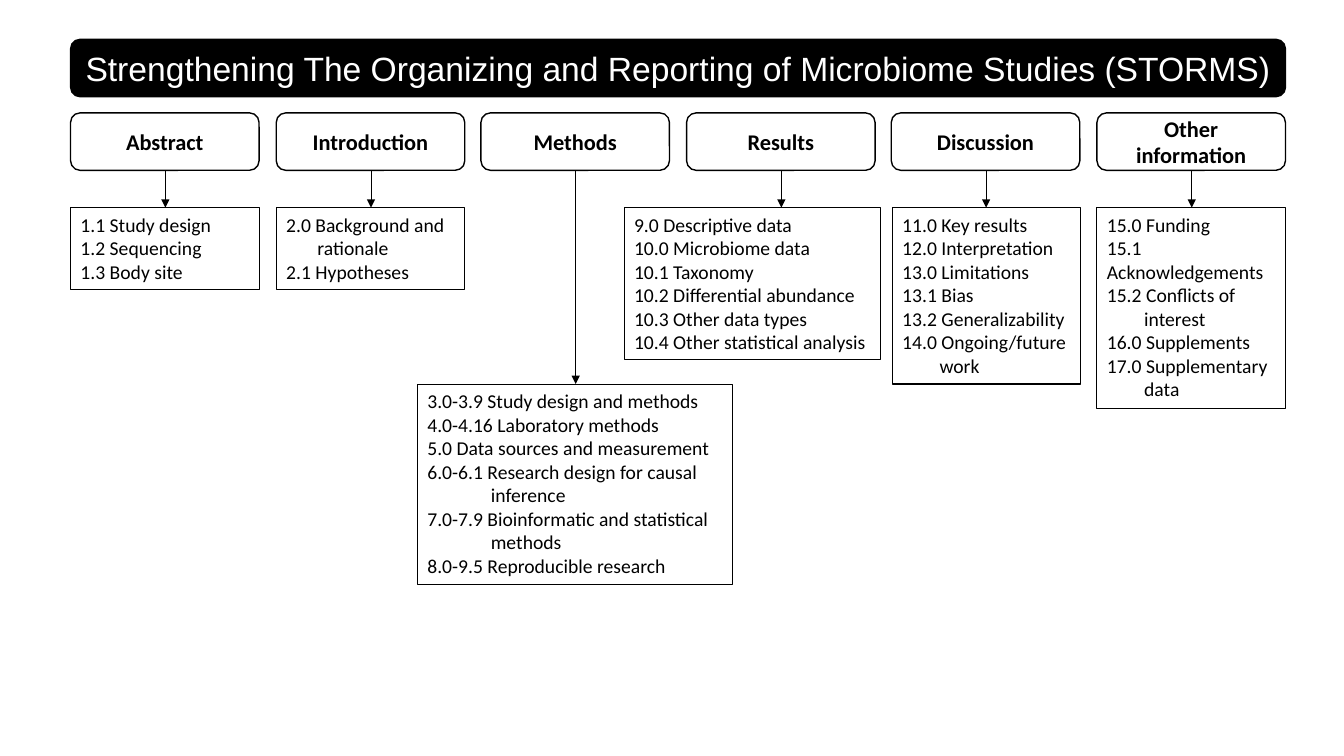
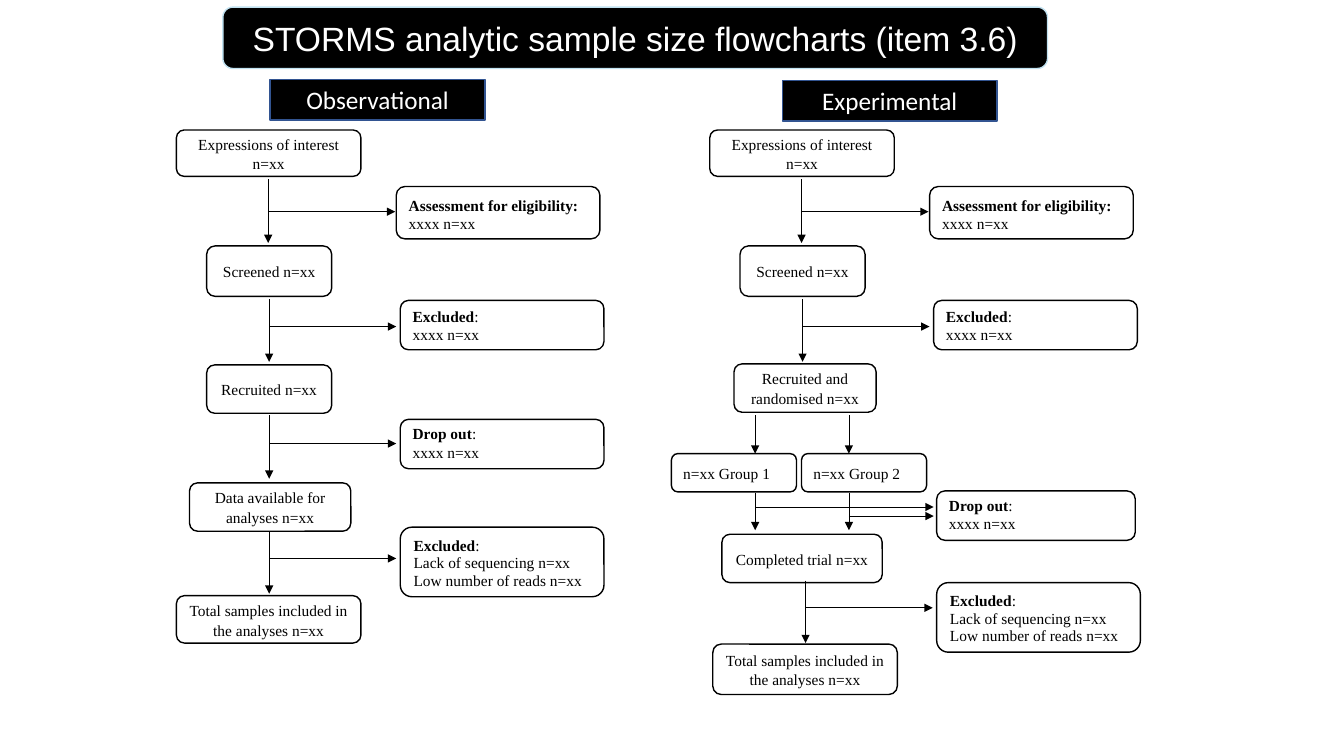
import lxml.etree
import pptx
import pptx.dml.color
import pptx.enum.shapes
import pptx.enum.text
import pptx.oxml
import pptx.oxml.ns
import pptx.util

SCALE = 9144
COLORS = {"black": "000000", "white": "FFFFFF", "pale": "C1E2F1", "navy": "325491"}
SHAPES = pptx.enum.shapes.MSO_SHAPE
ANCHORS = pptx.enum.text.MSO_ANCHOR
ALIGNS = pptx.enum.text.PP_ALIGN


def px(length):
    return pptx.util.Emu(length * SCALE)


def color(name):
    return pptx.dml.color.RGBColor.from_string(COLORS[name])


def put_text(frame, text, font="Calibri", size=14, ink="black", bold=False,
             align=ALIGNS.LEFT, line_spacing=None, space_before=0, hanging=0, join=False):
    paragraph = frame.paragraphs[-1]
    if not join:
        if paragraph.runs:
            paragraph = frame.add_paragraph()
            paragraph.space_before = pptx.util.Pt(space_before)
        paragraph.alignment = align
        paragraph.line_spacing = line_spacing
        if hanging:
            properties = paragraph._p.get_or_add_pPr()
            properties.set("marL", str(px(hanging)))
            properties.set("indent", str(px(-hanging)))
    run = paragraph.add_run()
    run.text = text
    run.font.name = font
    run.font.size = pptx.util.Pt(size)
    run.font.bold = bold
    run.font.color.rgb = color(ink)


class Deck:
    serif = {"font": "Times New Roman", "size": 11}

    def __init__(self):
        self.presentation = pptx.Presentation()
        self.presentation.slide_width = px(1333)
        self.presentation.slide_height = px(750)
        self.slide = None

    def add_slide(self, title, box, line="black"):
        self.slide = self.presentation.slides.add_slide(self.presentation.slide_layouts[5])
        self.box(box, SHAPES.ROUNDED_RECTANGLE, fill="black", line=line)
        placeholder = self.slide.shapes.title
        placeholder.left, placeholder.top, placeholder.width, placeholder.height = map(px, box)
        self.slide.shapes._spTree.append(placeholder._element)
        frame = placeholder.text_frame
        frame.auto_size = pptx.enum.text.MSO_AUTO_SIZE.NONE
        frame.word_wrap = True
        frame.vertical_anchor = ANCHORS.MIDDLE
        put_text(frame, title, font="Arial", size=24, ink="white", align=ALIGNS.CENTER)

    def box(self, box, kind, fill="white", line="black", anchor=ANCHORS.MIDDLE):
        shape = self.slide.shapes.add_shape(kind, *map(px, box))
        shape.shadow.inherit = False
        shape.fill.solid()
        shape.fill.fore_color.rgb = color(fill)
        shape.line.color.rgb = color(line)
        shape.line.width = pptx.util.Pt(1)
        shape.text_frame.word_wrap = True
        shape.text_frame.vertical_anchor = anchor
        return shape.text_frame

    def section(self, text, box):
        frame = self.box(box, SHAPES.ROUNDED_RECTANGLE)
        put_text(frame, text, size=16, bold=True, align=ALIGNS.CENTER)

    def heading(self, text, box):
        frame = self.box(box, SHAPES.RECTANGLE, fill="black", line="navy")
        put_text(frame, text, size=18, ink="white", align=ALIGNS.CENTER)

    def item_list(self, items, box, hanging):
        shape = self.slide.shapes.add_textbox(*map(px, box))
        shape.line.color.rgb = color("black")
        shape.line.width = pptx.util.Pt(0.75)
        frame = shape.text_frame
        frame.word_wrap = True
        frame.auto_size = pptx.enum.text.MSO_AUTO_SIZE.SHAPE_TO_FIT_TEXT
        for item in items:
            put_text(frame, item, hanging=hanging if item in HANGING_ITEMS else 0)

    def step(self, text, box, align=ALIGNS.CENTER):
        frame = self.box(box, SHAPES.FLOWCHART_ALTERNATE_PROCESS)
        put_text(frame, text, align=align, line_spacing=1.07, **self.serif)

    def side_note(self, label, lines, box, mark="", line_spacing=0.5, space_before=6):
        frame = self.box(box, SHAPES.FLOWCHART_ALTERNATE_PROCESS, anchor=ANCHORS.BOTTOM)
        put_text(frame, label, bold=True, line_spacing=line_spacing, **self.serif)
        if mark:
            put_text(frame, mark, join=True, **self.serif)
        for line in lines:
            put_text(frame, line, line_spacing=line_spacing, space_before=space_before,
                     **self.serif)

    def arrow(self, *ends):
        connector = self.slide.shapes.add_connector(
            pptx.enum.shapes.MSO_CONNECTOR.STRAIGHT, *map(px, ends))
        connector.line.color.rgb = color("black")
        connector.line.width = pptx.util.Pt(0.5)
        tail = lxml.etree.SubElement(connector.line._get_or_add_ln(),
                                     pptx.oxml.ns.qn("a:tailEnd"))
        tail.set("type", "triangle")
        lxml.etree.SubElement(connector._element.spPr, pptx.oxml.ns.qn("a:effectLst"))

    def branch(self, x, top, bottom, side_y, side_x):
        self.arrow(x, top, x, bottom)
        self.arrow(x, side_y, side_x, side_y)


HANGING_ITEMS = {
    "2.0 Background and rationale",
    "6.0-6.1 Research design for causal inference",
    "7.0-7.9 Bioinformatic and statistical methods",
    "14.0 Ongoing/future work",
    "15.2 Conflicts of interest",
    "17.0 Supplementary data",
}

SECTIONS = [
    ("Abstract", (70, 206, 187, 81), 0,
     ["1.1 Study design", "1.2 Sequencing", "1.3 Body site"]),
    ("Introduction", (274, 206, 187, 81), 31,
     ["2.0 Background and rationale", "2.1 Hypotheses"]),
    ("Methods", (414, 381, 313, 199), 63,
     ["3.0-3.9 Study design and methods", "4.0-4.16 Laboratory methods",
      "5.0 Data sources and measurement", "6.0-6.1 Research design for causal inference",
      "7.0-7.9 Bioinformatic and statistical methods", "8.0-9.5 Reproducible research"]),
    ("Results", (619, 206, 254, 151), 0,
     ["9.0 Descriptive data", "10.0 Microbiome data", "10.1 Taxonomy",
      "10.2 Differential abundance", "10.3 Other data types",
      "10.4 Other statistical analysis"]),
    ("Discussion", (885, 206, 187, 175), 37,
     ["11.0 Key results", "12.0 Interpretation", "13.0 Limitations", "13.1 Bias",
      "13.2 Generalizability", "14.0 Ongoing/future work"]),
    ("Other information", (1088, 206, 187, 199), 37,
     ["15.0 Funding", "15.1 Acknowledgements", "15.2 Conflicts of interest",
      "16.0 Supplements", "17.0 Supplementary data"]),
]


def build_checklist(deck):
    deck.add_slide("Strengthening The Organizing and Reporting of Microbiome Studies (STORMS)",
                   (70, 39, 1205, 57))
    for index, (name, list_box, hanging, items) in enumerate(SECTIONS):
        left = round(70 + index * 203.6)
        deck.section(name, (left, 112, 187, 57))
        deck.item_list(items, list_box, hanging)
        deck.arrow(left + 94, 169, left + 94, list_box[1])


def build_flowcharts(deck):
    deck.add_slide("STORMS analytic sample size flowcharts (item 3.6)",
                   (221, 7, 818, 61), line="pale")
    deck.heading("Observational", (268, 79, 213, 40))
    deck.heading("Experimental", (776, 80, 213, 40))

    for shift in (0, 529):
        deck.step("Expressions of interest n=xx", (175 + shift, 129, 183, 46))
        deck.side_note("Assessment for eligibility:", ["xxxx n=xx"],
                       (393 + shift, 185, 202, 52))
        deck.step("Screened n=xx", (205 + shift, 244, 124, 50))
        deck.side_note("Excluded", ["xxxx n=xx"], (397 + shift, 298, 202, 49), mark=":")
        deck.branch(266 + shift, 178, 241, 210, 392 + shift)
        deck.branch(267 + shift, 297, 359, 324, 393 + shift)

    for box in ((397, 416, 202, 49), (929, 487, 197, 49)):
        deck.side_note("Drop out", ["xxxx n=xx"], box, mark=":",
                       line_spacing=None, space_before=0)
    for box in ((397, 523, 202, 69), (929, 578, 202, 69)):
        deck.side_note("Excluded", ["Lack of sequencing n=xx", "Low number of reads n=xx"],
                       box, mark=":")
    for box in ((175, 591, 183, 47), (707, 639, 183, 50)):
        deck.step("Total samples included in the analyses n=xx", box)

    deck.step("Recruited n=xx", (205, 362, 124, 48))
    deck.step("Data available for analyses n=xx", (188, 479, 160, 48))
    deck.branch(267, 412, 475, 440, 393)
    deck.branch(267, 527, 589, 554, 393)

    deck.step("Recruited and randomised n=xx", (728, 361, 141, 48))
    deck.step("Completed trial n=xx", (716, 530, 159, 48))
    groups = [("n=xx Group 1", 666, 749, 503), ("n=xx Group 2", 795, 842, 512)]
    for text, left, x, side_y in groups:
        deck.step(text, (left, 450, 124, 38), align=ALIGNS.LEFT)
        deck.arrow(x, 412, x, 450)
        deck.branch(x, 489, 526, side_y, 926)
    deck.branch(799, 576, 638, 603, 925)


def main():
    deck = Deck()
    build_checklist(deck)
    build_flowcharts(deck)
    deck.presentation.save("out.pptx")


if __name__ == "__main__":
    main()
